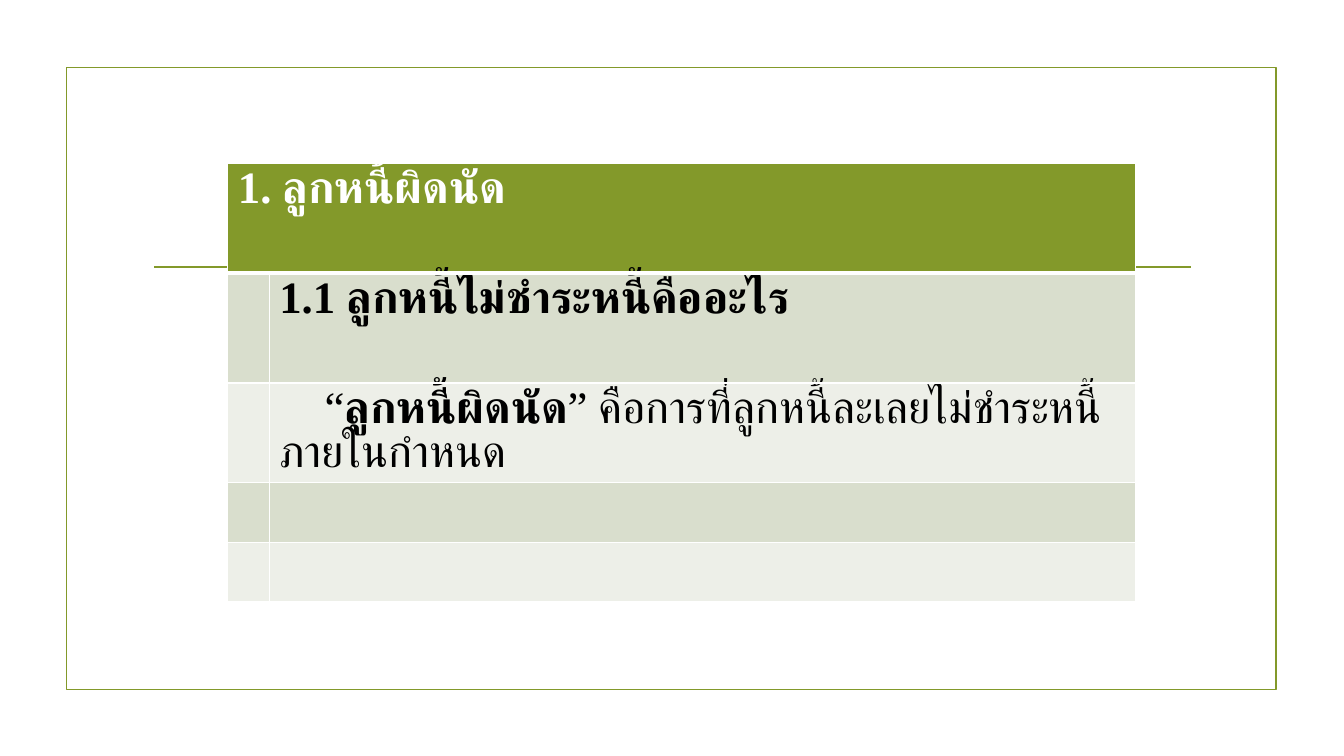
from lxml.etree import SubElement
from pptx import Presentation
from pptx.dml.color import RGBColor
from pptx.enum.shapes import MSO_CONNECTOR, MSO_SHAPE
from pptx.oxml.ns import qn
from pptx.util import Inches, Pt

GREEN = RGBColor(0x83, 0x99, 0x2A)
SAGE = RGBColor(0xD9, 0xDE, 0xCD)
PALE = RGBColor(0xED, 0xEF, 0xE8)
WHITE = RGBColor(0xFF, 0xFF, 0xFF)
BLACK = RGBColor(0, 0, 0)
FONT = "Times New Roman"

HEADING = [("1. ลูกหนี้ผิดนัด", True)]
QUESTION = [("1.1 ลูกหนี้ไม่ชำระหนี้คืออะไร", True)]
DEFINITION = [
    ("“", False),
    ("ลูกหนี้ผิดนัด", True),
    ("” คือการที่ลูกหนี้ละเลยไม่ชำระหนี้ภายในกำหนด", False),
]
ROWS = [
    (1.09, [HEADING, []]),
    (1.09, [[], QUESTION]),
    (0.99, [[], DEFINITION]),
    (0.59, [[], []]),
    (0.59, [[], []]),
]
COLUMNS = [0.41, 8.59]


def set_borders(cell, bottom):
    props = cell._tc.get_or_add_tcPr()
    widths = {"a:lnL": 1, "a:lnR": 1, "a:lnT": 1, "a:lnB": bottom}
    for position, (side, width) in enumerate(widths.items()):
        border = SubElement(props, qn(side), w=str(Pt(width)))
        color = SubElement(SubElement(border, qn("a:solidFill")), qn("a:srgbClr"))
        color.set("val", str(WHITE))
        props.insert(position, border)


def write(cell, pieces, color):
    paragraph = cell.text_frame.paragraphs[0]
    paragraph.line_spacing = Pt(32)
    if pieces is DEFINITION:
        paragraph._p.get_or_add_pPr().set("indent", str(Inches(0.45)))
    for words, bold in pieces:
        run = paragraph.add_run()
        run.text = words
        run.font.name = FONT
        run.font.size = Pt(32)
        run.font.bold = bold
        run.font.color.rgb = color
        SubElement(run._r.get_or_add_rPr(), qn("a:cs"), typeface=FONT)


def main():
    deck = Presentation()
    deck.slide_width, deck.slide_height = Inches(13.33), Inches(7.5)
    slide = deck.slides.add_slide(deck.slide_layouts[6])

    frame = slide.shapes.add_shape(
        MSO_SHAPE.RECTANGLE, Inches(0.66), Inches(0.67), Inches(12), Inches(6.17))
    frame.shadow.inherit = False
    frame.fill.background()
    rule = slide.shapes.add_connector(
        MSO_CONNECTOR.STRAIGHT, Inches(1.53), Inches(2.65), Inches(11.81), Inches(2.65))
    SubElement(rule._element.spPr, qn("a:effectLst"))
    for outline in (frame.line, rule.line):
        outline.color.rgb = GREEN
        outline.width = Pt(1.25)

    heights = [height for height, _ in ROWS]
    table = slide.shapes.add_table(
        len(ROWS), len(COLUMNS), Inches(2.26), Inches(1.62),
        Inches(sum(COLUMNS)), Inches(sum(heights))).table
    for column, width in zip(table.columns, COLUMNS):
        column.width = Inches(width)
    for r, (height, row_content) in enumerate(ROWS):
        table.rows[r].height = Inches(height)
        for c, pieces in enumerate(row_content):
            cell = table.cell(r, c)
            cell.fill.solid()
            cell.fill.fore_color.rgb = GREEN if r == 0 else SAGE if r % 2 else PALE
            set_borders(cell, 3 if r == 0 else 1)
            write(cell, pieces, WHITE if r == 0 else BLACK)
    table.cell(0, 0).merge(table.cell(0, 1))

    deck.save("out.pptx")


if __name__ == "__main__":
    main()
